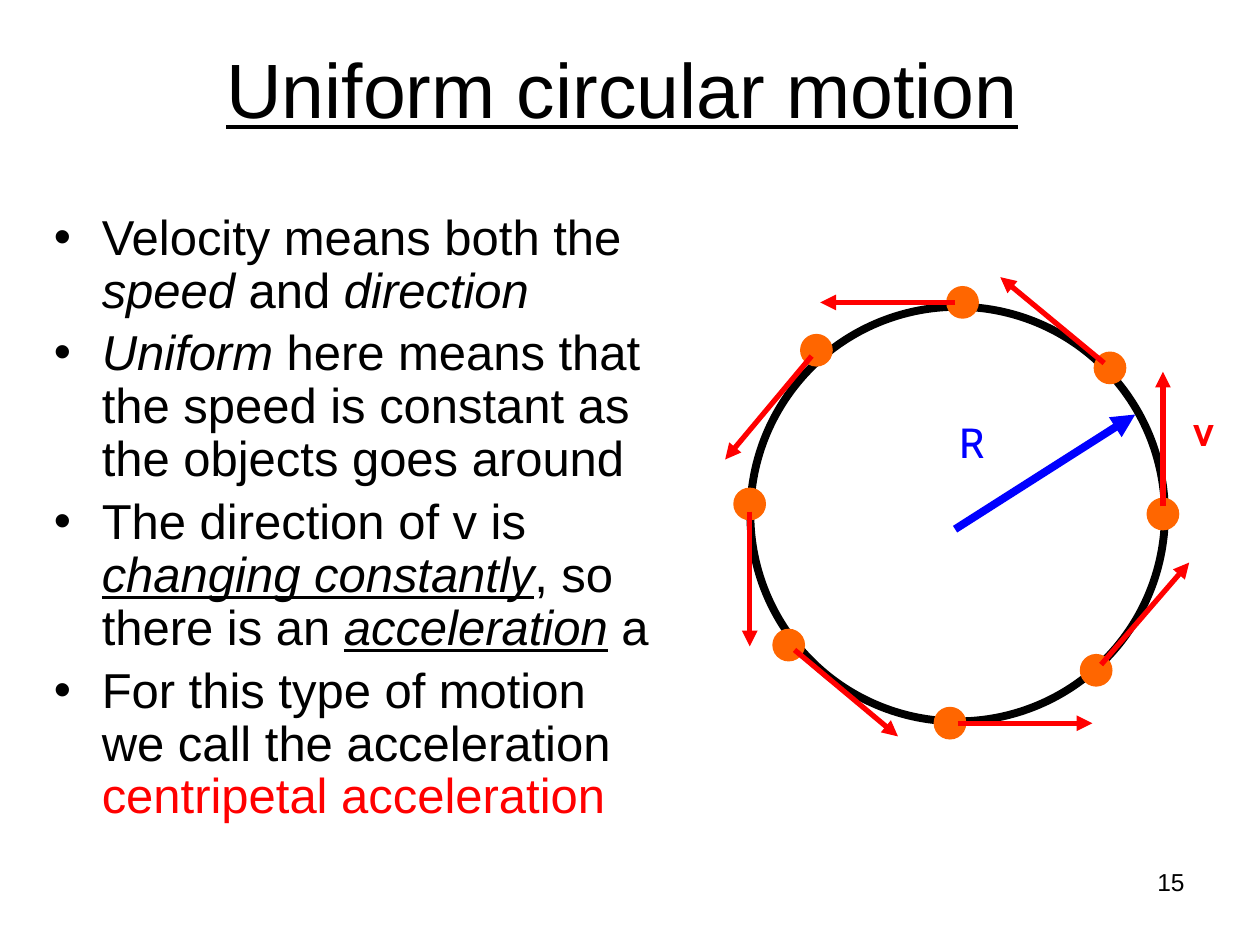
from dataclasses import dataclass
from math import cos, radians, sin

from lxml import etree
from pptx import Presentation
from pptx import util as u
from pptx.dml.color import RGBColor
from pptx.enum import shapes, text
from pptx.oxml.ns import qn


@dataclass(frozen=True)
class Theme:
    black: str = "000000"
    red: str = "FF0000"
    blue: str = "0000FF"
    dot: str = "FF6600"
    font: str = "Arial"
    sans: str = "Cabin"
    title: int = 44
    body: int = 28
    label: int = 24
    small: int = 14
    thick: float = 4.5
    thin: float = 3


T = Theme()
ITAL = {"italic": True}
MARK = {"italic": True, "underline": True}
BODY = [
    [("Velocity means both the ", {}), ("speed", ITAL), (" and ", {}),
     ("direction", ITAL)],
    [("Uniform", ITAL),
     (" here means that the speed is constant as the objects goes around", {})],
    [("The direction of v is ", {}), ("changing constantly", MARK),
     (", so there is an ", {}), ("acceleration", MARK), (" a", {})],
    [("For this type of motion we call the acceleration ", {}),
     ("centripetal acceleration", {"color": T.red})],
]
DOTS = [
    (9.23, 4.08, 0), (8.81, 2.92, 309.6), (6.48, 2.78, 219.9), (5.95, 4, 180),
    (6.26, 5.12, 129.9), (7.54, 5.74, 90), (8.7, 5.32, 40.8), (7.64, 2.4, 270),
]
SIZE, START, REACH = 0.26, 0.06, 1.13


def add_text(slide, box, paras, size, font=T.font, look=None, frame=None, para=None):
    area = slide.shapes.add_textbox(*map(u.Inches, box)).text_frame
    for key, val in {"word_wrap": True, **(frame or {})}.items():
        setattr(area, key, val)
    for num, runs in enumerate(paras):
        item = area.paragraphs[0] if num == 0 else area.add_paragraph()
        for key, val in (para or {}).items():
            setattr(item, key, val)
        for words, extra in runs:
            run = item.add_run()
            run.text = words
            form = {"name": font, "size": u.Pt(size), "color": T.black,
                    **(look or {}), **extra}
            run.font.color.rgb = RGBColor.from_string(form.pop("color"))
            for key, val in form.items():
                setattr(run.font, key, val)
    return area


def add_list(slide, box, paras):
    area = add_text(slide, box, paras, T.body,
                    para={"line_spacing": 0.9, "space_before": u.Pt(T.body * 0.2)})
    for item in area.paragraphs:
        props = item._p.get_or_add_pPr()
        props.set("marL", str(u.Inches(0.38)))
        props.set("indent", str(-u.Inches(0.38)))
        etree.SubElement(props, qn("a:buFont"), typeface=T.font)
        etree.SubElement(props, qn("a:buChar"), char="•")


def add_disc(slide, x, y, size, fill=None, line=None):
    box = (x - size / 2, y - size / 2, size, size)
    disc = slide.shapes.add_shape(shapes.MSO_SHAPE.OVAL, *map(u.Inches, box))
    disc.shadow.inherit = False
    if fill:
        disc.fill.solid()
        disc.fill.fore_color.rgb = RGBColor.from_string(fill)
    else:
        disc.fill.background()
    if line:
        disc.line.color.rgb = RGBColor.from_string(line)
        disc.line.width = u.Pt(T.thick)
    else:
        disc.line.fill.background()


def add_arrow(slide, ends, color, width):
    arrow = slide.shapes.add_connector(shapes.MSO_CONNECTOR.STRAIGHT,
                                       *map(u.Inches, ends))
    arrow.line.color.rgb = RGBColor.from_string(color)
    arrow.line.width = u.Pt(width)
    etree.SubElement(arrow.line._get_or_add_ln(), qn("a:tailEnd"), type="triangle")
    etree.SubElement(arrow._element.spPr, qn("a:effectLst"))


def add_mover(slide, x, y, turn):
    add_disc(slide, x, y, SIZE, fill=T.dot)
    dx, dy = sin(radians(turn)), -cos(radians(turn))
    ends = (x + START * dx, y + START * dy, x + REACH * dx, y + REACH * dy)
    add_arrow(slide, ends, T.red, T.thin)


def add_label(slide, box, words, look):
    add_text(slide, box, [[(words, look)]], T.label, T.sans,
             frame={"word_wrap": False,
                    "auto_size": text.MSO_AUTO_SIZE.SHAPE_TO_FIT_TEXT})


def main():
    deck = Presentation()
    deck.slide_width, deck.slide_height = u.Inches(10), u.Inches(7.5)
    slide = deck.slides.add_slide(deck.slide_layouts[6])
    add_text(slide, (0.44, 0.22, 9, 0.95), [[("Uniform circular motion", {})]],
             T.title, look={"underline": True},
             frame={"vertical_anchor": text.MSO_ANCHOR.MIDDLE},
             para={"alignment": text.PP_ALIGN.CENTER})
    add_list(slide, (0.33, 1.64, 4.96, 5.48), BODY)
    add_disc(slide, 7.6, 4.08, 3.29, line=T.black)
    for spot in DOTS:
        add_mover(slide, *spot)
    add_arrow(slide, (7.58, 4.2, 9.01, 3.29), T.blue, T.thick)
    add_label(slide, (7.52, 3.26, 0.41, 0.5), "R", {"color": T.blue})
    add_label(slide, (9.37, 3.16, 0.39, 0.5), "v", {"color": T.red, "bold": True})
    add_text(slide, (7.17, 6.83, 2.33, 0.52), [[("15", {})]], T.small,
             para={"alignment": text.PP_ALIGN.RIGHT})
    deck.save("out.pptx")


if __name__ == "__main__":
    main()
